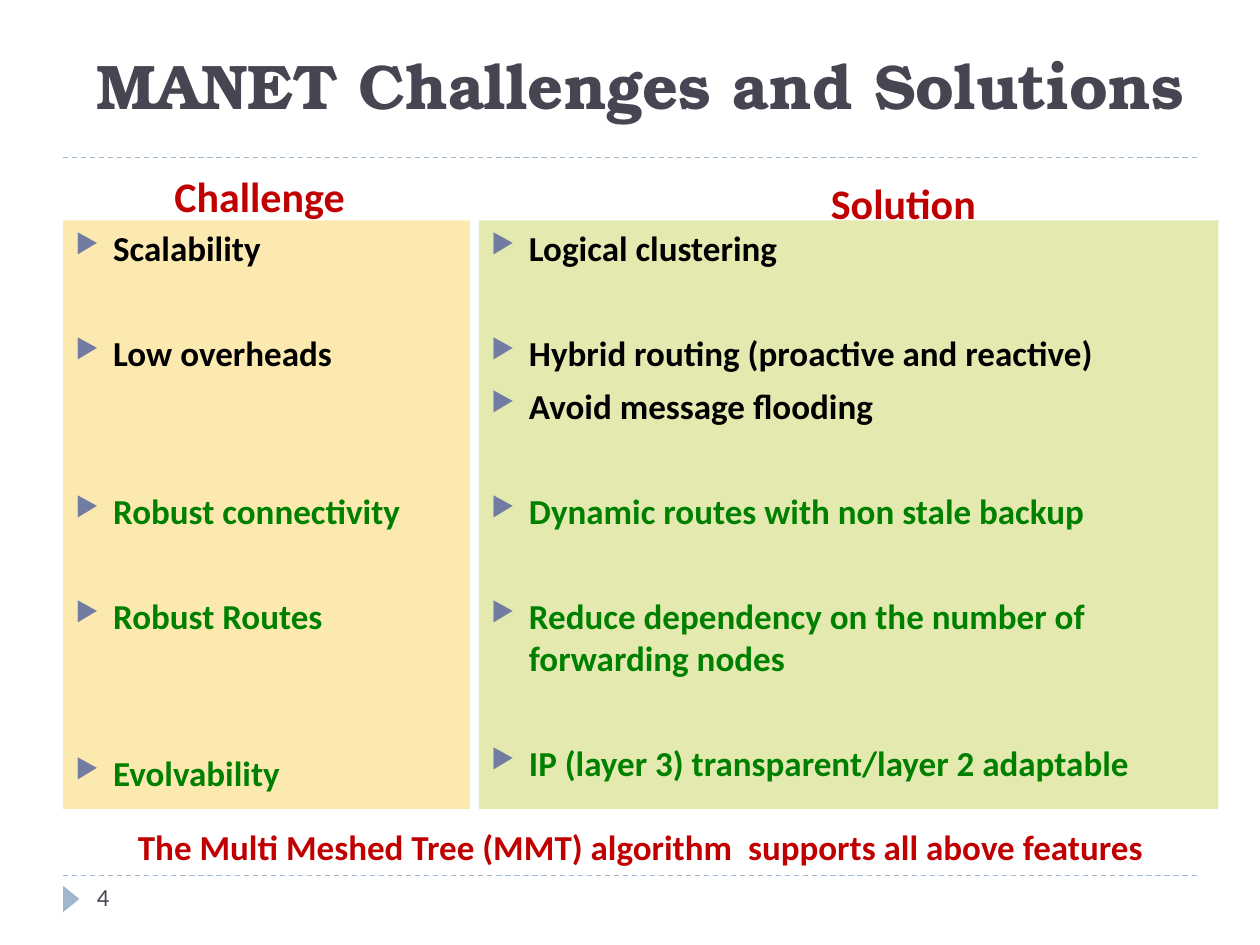
"""Build the slide on MANET challenges and their solutions."""
from dataclasses import dataclass

from lxml import etree
from pptx import Presentation
from pptx.dml.color import RGBColor
from pptx.enum.dml import MSO_LINE
from pptx.enum.shapes import MSO_CONNECTOR, MSO_SHAPE
from pptx.enum.text import MSO_ANCHOR, PP_ALIGN
from pptx.oxml.ns import qn
from pptx.util import Pt

SCALE = 9144
RECT = MSO_SHAPE.RECTANGLE
ARROW = MSO_SHAPE.ISOSCELES_TRIANGLE
STRAIGHT = MSO_CONNECTOR.STRAIGHT
DASH = MSO_LINE.DASH
LEFT, CENTER = PP_ALIGN.LEFT, PP_ALIGN.CENTER
TOP, MIDDLE, BOTTOM = MSO_ANCHOR.TOP, MSO_ANCHOR.MIDDLE, MSO_ANCHOR.BOTTOM


@dataclass(frozen=True)
class Theme:
    """Fonts, colours and type sizes."""
    serif: str = "TeX Gyre Bonum"
    sans: str = "Calibri"
    ink: str = "464653"
    red: str = "C00000"
    black: str = "000000"
    green: str = "008000"
    rule: str = "9FB8CD"
    bullet: str = "727CA3"
    sand: str = "FCE9AF"
    lime: str = "E4E9AF"
    title: int = 36
    head: int = 24
    body: int = 20
    note: int = 14
    gap: int = 6
    pitch: int = 30


THEME = Theme()


@dataclass(frozen=True)
class Box:
    """A frame in px."""
    x: int
    y: int
    w: int
    h: int

    def emu(self) -> list[int]:
        """Return the frame in EMU."""
        return [px(n) for n in (self.x, self.y, self.w, self.h)]


@dataclass(frozen=True)
class Item:
    """A bullet and the empty rows above it."""
    text: str
    skip: int = 1
    color: str = THEME.green


@dataclass(frozen=True)
class Panel:
    """A headed column of bullets."""
    head: str
    top: Box
    box: Box
    fill: str
    items: tuple[Item, ...]


PANELS = (
    Panel("Challenge", Box(50, 127, 312, 53), Box(50, 175, 323, 467), THEME.sand, (
        Item("Scalability", 0, THEME.black),
        Item("Low overheads", 1, THEME.black),
        Item("Robust connectivity", 2),
        Item("Robust Routes"),
        Item("Evolvability", 2),
    )),
    Panel("Solution", Box(496, 138, 442, 48), Box(380, 175, 587, 467), THEME.lime, (
        Item("Logical clustering", 0, THEME.black),
        Item("Hybrid routing (proactive and reactive)", 1, THEME.black),
        Item("Avoid message flooding", 0, THEME.black),
        Item("Dynamic routes with non stale backup"),
        Item("Reduce dependency on the number of forwarding nodes"),
        Item("IP (layer 3) transparent/layer 2 adaptable"),
    )),
)


def px(n: int) -> int:
    """Turn px into EMU."""
    return n * SCALE


def rgb(code: str) -> RGBColor:
    """Turn a hex code into a colour."""
    return RGBColor.from_string(code)


def write(para, text: str, *, size: int = THEME.body, color: str = THEME.red,
          font: str = THEME.sans, bold: bool = True, align=LEFT, before: int = 0) -> None:
    """Write one formatted run into a paragraph."""
    para.alignment = align
    para.space_before = Pt(before)
    run = para.add_run()
    run.text = text
    run.font.size, run.font.bold, run.font.name = Pt(size), bold, font
    run.font.color.rgb = rgb(color)


def label(slide, box: Box, text: str, anchor=TOP, **style) -> None:
    """Add a text box with one paragraph."""
    frame = slide.shapes.add_textbox(*box.emu()).text_frame
    frame.word_wrap = True
    frame.vertical_anchor = anchor
    write(frame.paragraphs[0], text, **style)


def solid(slide, kind, box: Box, fill: str):
    """Add a flat shape with no outline."""
    shape = slide.shapes.add_shape(kind, *box.emu())
    shape.shadow.inherit = False
    shape.fill.solid()
    shape.fill.fore_color.rgb = rgb(fill)
    shape.line.fill.background()
    return shape


def rule(slide, y: int) -> None:
    """Add a dashed line across the slide."""
    line = slide.shapes.add_connector(STRAIGHT, px(50), px(y), px(950), px(y))
    line.line.color.rgb = rgb(THEME.rule)
    line.line.width = Pt(0.75)
    line.line.dash_style = DASH
    etree.SubElement(line._element.spPr, qn("a:effectLst"))


def bullet(para) -> None:
    """Give a paragraph a hanging arrow bullet."""
    props = para._p.get_or_add_pPr()
    props.set("marL", str(px(30)))
    props.set("indent", str(px(-30)))
    tint = etree.SubElement(props, qn("a:buClr"))
    etree.SubElement(tint, qn("a:srgbClr"), val=THEME.bullet)
    etree.SubElement(props, qn("a:buSzPct"), val="76000")
    etree.SubElement(props, qn("a:buChar"), char="▶")


def column(slide, panel: Panel) -> None:
    """Draw a panel with its heading and bullets."""
    frame = solid(slide, RECT, panel.box, panel.fill).text_frame
    frame.word_wrap = True
    frame.vertical_anchor = TOP
    for i, item in enumerate(panel.items):
        para = frame.add_paragraph() if i else frame.paragraphs[0]
        write(para, item.text, color=item.color,
              before=THEME.gap + item.skip * THEME.pitch)
        bullet(para)
    label(slide, panel.top, panel.head, BOTTOM, size=THEME.head, align=CENTER)


def main() -> None:
    """Build and save the slide."""
    deck = Presentation()
    deck.slide_width, deck.slide_height = px(1000), px(750)
    slide = deck.slides.add_slide(deck.slide_layouts[6])
    for y in (695, 125):
        rule(slide, y)
    solid(slide, ARROW, Box(46, 707, 21, 13), THEME.rule).rotation = 90
    label(slide, Box(67, 17, 900, 100), "MANET Challenges and Solutions", MIDDLE,
          size=THEME.title, font=THEME.serif, color=THEME.ink)
    for panel in PANELS:
        column(slide, panel)
    label(slide, Box(50, 650, 917, 44),
          "The Multi Meshed Tree (MMT) algorithm  supports all above features",
          align=CENTER)
    label(slide, Box(67, 695, 217, 40), "4", size=THEME.note, color=THEME.ink,
          bold=False)
    deck.save("out.pptx")


if __name__ == "__main__":
    main()
